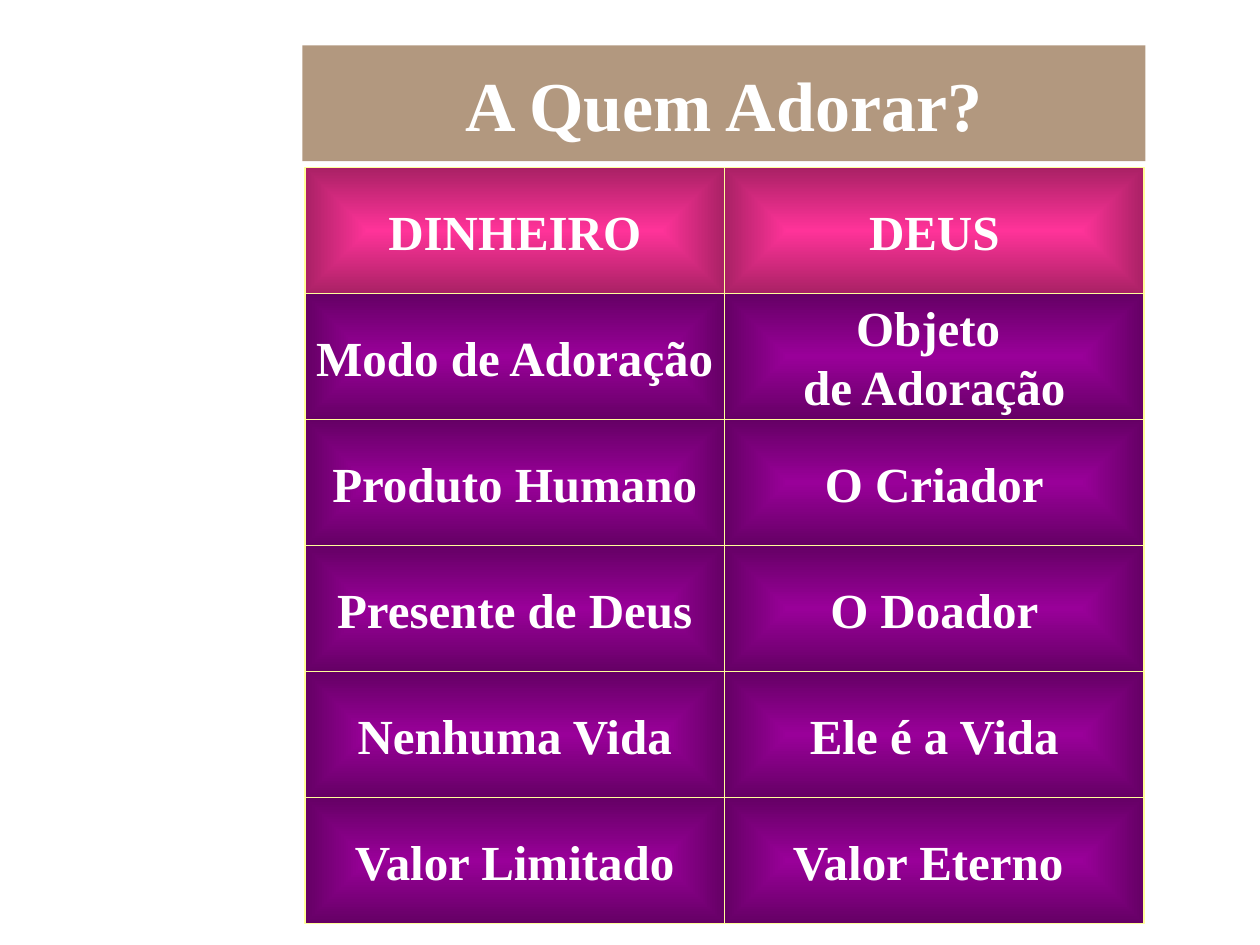
from dataclasses import dataclass

from lxml import etree
from pptx import Presentation
from pptx.dml.color import RGBColor
from pptx.enum.shapes import MSO_SHAPE
from pptx.enum.text import MSO_ANCHOR, MSO_AUTO_SIZE, PP_ALIGN
from pptx.oxml import parse_xml
from pptx.oxml.ns import nsdecls, qn
from pptx.util import Inches, Pt

RECT = MSO_SHAPE.RECTANGLE
MIDDLE = MSO_ANCHOR.MIDDLE
NO_FIT = MSO_AUTO_SIZE.NONE
CENTER = PP_ALIGN.CENTER

LEFT, TOP, WIDE, HIGH = 2.42, 1.33, 3.33, 1
ROWS = [
    ("DINHEIRO", "DEUS"),
    ("Modo de Adoração", "Objeto \nde Adoração"),
    ("Produto Humano", "O Criador"),
    ("Presente de Deus", "O Doador"),
    ("Nenhuma Vida", "Ele é a Vida"),
    ("Valor Limitado", "Valor Eterno "),
]


@dataclass(frozen=True)
class Theme:
    """Colours, font and type sizes."""

    font: str = "Times New Roman"
    text: str = "FFFFFF"
    band: str = "663300"
    head: str = "FF3399"
    body: str = "990099"
    edge: str = "FFFF99"
    big: int = 40
    size: int = 28
    alpha: int = 50
    shade: int = 39


class Board:
    """Draws styled elements on one slide."""

    def __init__(self, slide, theme):
        self.slide = slide
        self.theme = theme

    def label(self, shape, text, size, wrap):
        """Fill a shape with centred bold text."""
        frame = shape.text_frame
        frame.text = text
        frame.word_wrap = wrap
        frame.auto_size = NO_FIT
        frame.vertical_anchor = MIDDLE
        for para in frame.paragraphs:
            para.alignment = CENTER
            para.font.name = self.theme.font
            para.font.size = Pt(size)
            para.font.bold = True
            para.font.color.rgb = RGBColor.from_string(self.theme.text)

    def title(self, text, left, top, width, height):
        """Place the title on a half-clear band."""
        shape = self.slide.shapes.title
        shape.left, shape.top = Inches(left), Inches(top)
        shape.width, shape.height = Inches(width), Inches(height)
        shape.fill.solid()
        shape.fill.fore_color.rgb = RGBColor.from_string(self.theme.band)
        tint = shape.element.spPr.find(qn("a:solidFill"))[0]
        etree.SubElement(tint, qn("a:alpha"), val=str(self.theme.alpha * 1000))
        self.label(shape, text, self.theme.big, True)

    def glow(self, shape, color):
        """Shade a shape from a bright centre to dark edges."""
        fill = parse_xml(
            f'<a:gradFill {nsdecls("a")} rotWithShape="0"><a:gsLst>'
            f'<a:gs pos="0"><a:srgbClr val="{color}"/></a:gs>'
            f'<a:gs pos="100000"><a:srgbClr val="{color}">'
            f'<a:shade val="{self.theme.shade * 1000}"/></a:srgbClr></a:gs>'
            '</a:gsLst><a:path path="shape">'
            '<a:fillToRect l="50000" t="50000" r="50000" b="50000"/>'
            '</a:path></a:gradFill>'
        )
        shape.element.spPr.find(qn("a:prstGeom")).addnext(fill)

    def cell(self, text, left, top, color):
        """Draw one framed cell of the grid."""
        shape = self.slide.shapes.add_shape(
            RECT, Inches(left), Inches(top), Inches(WIDE), Inches(HIGH)
        )
        shape.shadow.inherit = False
        self.glow(shape, color)
        shape.line.color.rgb = RGBColor.from_string(self.theme.edge)
        shape.line.width = Pt(0.75)
        self.label(shape, text, self.theme.size, False)


def main():
    """Build and save the slide."""
    deck = Presentation()
    deck.slide_width, deck.slide_height = Inches(10), Inches(7.5)
    theme = Theme()
    board = Board(deck.slides.add_slide(deck.slide_layouts[5]), theme)
    board.title("A Quem Adorar?", 2.4, 0.36, 6.69, 0.92)
    for row, pair in enumerate(ROWS):
        color = theme.body if row else theme.head
        for col, text in enumerate(pair):
            board.cell(text, LEFT + col * WIDE, TOP + row * HIGH, color)
    deck.save("out.pptx")


if __name__ == "__main__":
    main()
